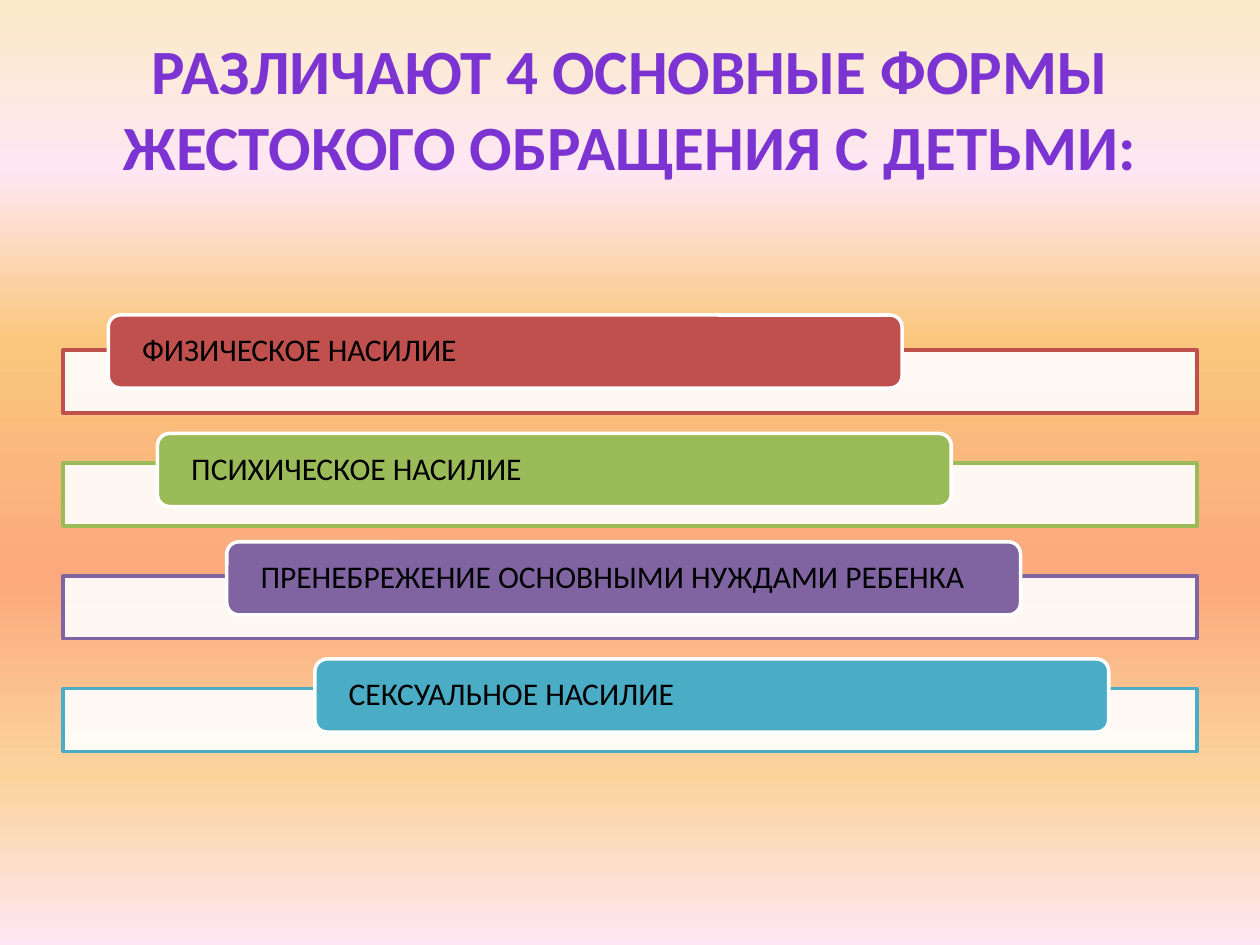
from lxml import etree
from pptx import Presentation
from pptx import util as u
from pptx.dml.color import RGBColor
from pptx.enum import shapes, text
from pptx.oxml.ns import qn

CELL = u.Inches(0.5)
COLUMNS, ROWS = 20, 15
COLORS = {
    "title": "7B34D2", "white": "FFFFFF", "black": "000000",
    "red": "C0504D", "green": "9BBB59", "purple": "8064A2", "blue": "4BACC6",
}
SKY = [(0, "FBEAC7"), (18, "FEE7F2"), (36, "FAC77D"),
       (61, "FBA97D"), (82, "FBD49C"), (100, "FEE7F2")]
FORMS = [
    ("ФИЗИЧЕСКОЕ НАСИЛИЕ", "red", 1.72, 5),
    ("ПСИХИЧЕСКОЕ НАСИЛИЕ", "green", 2.5, 6.88),
    ("ПРЕНЕБРЕЖЕНИЕ ОСНОВНЫМИ НУЖДАМИ РЕБЕНКА", "purple", 3.6, 8.6),
    ("СЕКСУАЛЬНОЕ НАСИЛИЕ", "blue", 5, 10.46),
]
PANEL_TOP, PANEL_STEP = 5.56, 1.79


def grid(*cells):
    return [int(CELL * cell) for cell in cells]


def rgb(name):
    return RGBColor.from_string(COLORS[name])


def paint_background(slide):
    fill = slide.background.fill
    fill.gradient()
    fill.gradient_angle = 270
    stops = slide.background._cSld.find(".//" + qn("a:gsLst"))
    for stop in list(stops):
        stops.remove(stop)
    for share, color in SKY:
        stop = etree.SubElement(stops, qn("a:gs"), pos=str(share * 1000))
        etree.SubElement(stop, qn("a:srgbClr"), val=color)


def write(holder, words, size, color, bold=False, align=text.PP_ALIGN.LEFT,
          insets=(0, 0, 0, 0), spacing=1.0):
    frame = holder.text_frame
    frame.word_wrap = True
    frame.auto_size = text.MSO_AUTO_SIZE.NONE
    frame.vertical_anchor = text.MSO_ANCHOR.MIDDLE
    (frame.margin_left, frame.margin_top,
     frame.margin_right, frame.margin_bottom) = map(u.Inches, insets)
    frame.text = words
    paragraph = frame.paragraphs[0]
    paragraph.alignment = align
    paragraph.line_spacing = spacing
    font = paragraph.runs[0].font
    font.name, font.size, font.bold = "Calibri", u.Pt(size), bold
    font.color.rgb = rgb(color)


def add_box(slide, kind, place, fill, line, opacity=100):
    box = slide.shapes.add_shape(kind, *grid(*place))
    box.shadow.inherit = False
    box.fill.solid()
    box.fill.fore_color.rgb = rgb(fill)
    if opacity < 100:
        tint = box._element.spPr.find(qn("a:solidFill"))[0]
        etree.SubElement(tint, qn("a:alpha"), val=str(opacity * 1000))
    box.line.color.rgb = rgb(line)
    box.line.width = u.Pt(2)
    return box


def add_title(slide, words):
    title = slide.shapes.title
    title.left, title.top, title.width, title.height = grid(1, 0.6, 18, 2.5)
    write(title, words, 36, "title", bold=True, align=text.PP_ALIGN.CENTER,
          insets=(0.1, 0, 0.1, 0.15))


def add_form(slide, index, words, color, left, top):
    add_box(slide, shapes.MSO_SHAPE.RECTANGLE,
            (1, PANEL_TOP + index * PANEL_STEP, 18, 1),
            "white", color, opacity=90)
    label = add_box(slide, shapes.MSO_SHAPE.ROUNDED_RECTANGLE,
                    (left, top, 12.6, 1.16), color, "white")
    write(label, words, 18, "black", insets=(0.24, 0, 0.24, 0), spacing=0.9)


def main():
    deck = Presentation()
    deck.slide_width, deck.slide_height = grid(COLUMNS, ROWS)
    slide = deck.slides.add_slide(deck.slide_layouts[5])
    paint_background(slide)
    add_title(slide, "РАЗЛИЧАЮТ 4 ОСНОВНЫЕ ФОРМЫ ЖЕСТОКОГО ОБРАЩЕНИЯ С ДЕТЬМИ:")
    for index, form in enumerate(FORMS):
        add_form(slide, index, *form)
    deck.save("out.pptx")


if __name__ == "__main__":
    main()
